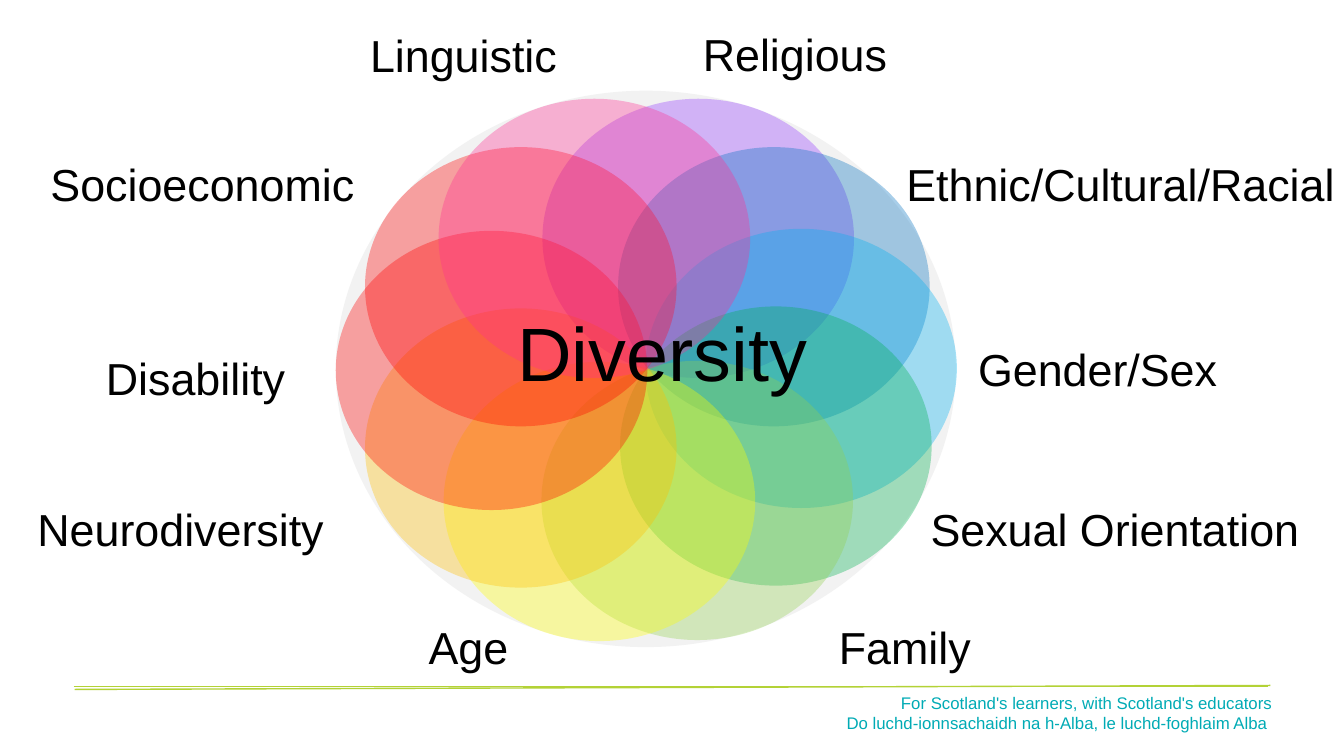
from dataclasses import dataclass

from lxml import etree
from pptx import Presentation
from pptx.dml.color import RGBColor
from pptx.enum.shapes import MSO_CONNECTOR, MSO_SHAPE
from pptx.enum.text import MSO_ANCHOR, MSO_AUTO_SIZE, PP_ALIGN
from pptx.oxml.ns import qn
from pptx.shapes.base import BaseShape
from pptx.slide import Slide
from pptx.util import Inches, Pt

OVAL = MSO_SHAPE.OVAL
STRAIGHT = MSO_CONNECTOR.STRAIGHT
LEFT = PP_ALIGN.LEFT
RIGHT = PP_ALIGN.RIGHT
TOP = MSO_ANCHOR.TOP
NO_AUTOFIT = MSO_AUTO_SIZE.NONE
TITLE_ONLY_LAYOUT = 5


@dataclass(frozen=True)
class Theme:
    font: str = "Arial"
    text: str = "000000"
    disc: str = "F2F2F2"
    rule: str = "B3D236"
    footer: str = "00ABB5"
    title_size: float = 54
    label_size: float = 32
    footer_size: float = 12
    petal_alpha: int = 34


@dataclass(frozen=True)
class Petal:
    left: float
    top: float
    color: str


@dataclass(frozen=True)
class Label:
    text: str
    left: float
    top: float
    width: float


@dataclass(frozen=True)
class Rule:
    start: tuple[float, float]
    end: tuple[float, float]
    weight: float


THEME = Theme()
PETAL_WIDTH, PETAL_HEIGHT = 3.09, 2.77
LABEL_HEIGHT = 0.54

RULES = [
    Rule((0.74, 6.84), (12.6, 6.8), 1),
    Rule((0.73, 6.81), (12.58, 6.81), 0.75),
]

# Clockwise from the top right, back to front
PETALS = [
    Petal(5.38, 0.98, "9437FF"),
    Petal(6.13, 1.46, "0070C0"),
    Petal(6.4, 2.27, "00B0F0"),
    Petal(6.15, 3.04, "00B050"),
    Petal(5.37, 3.58, "92D050"),
    Petal(4.4, 3.59, "FFFF00"),
    Petal(3.62, 3.06, "FFC000"),
    Petal(3.33, 2.29, "FF0000"),
    Petal(3.62, 1.46, "FF0000"),
    Petal(4.35, 0.98, "FF2F92"),
]

LABELS = [
    Label("Religious", 6.97, 0.27, 2.39),
    Label("Ethnic/Cultural/Racial", 8.99, 1.55, 4.34),
    Label("Gender/Sex", 9.7, 3.39, 2.99),
    Label("Sexual Orientation", 9.23, 4.98, 4.1),
    Label("Family", 8.32, 6.15, 1.62),
    Label("Age", 4.25, 6.15, 1.08),
    Label("Neurodiversity", 0.37, 4.98, 3.55),
    Label("Disability", 1.05, 3.48, 2.99),
    Label("Socioeconomic", 0.5, 1.55, 3.08),
    Label("Linguistic", 3.67, 0.28, 2.39),
]

FOOTER_LINES = [
    "For Scotland's learners, with Scotland's educators",
    "Do luchd-ionnsachaidh na h-Alba, le luchd-foghlaim Alba ",
]


def write_text(shape: BaseShape, lines: list[str], *, size: float,
               color: str = THEME.text, align: PP_ALIGN = LEFT,
               inset: tuple[float, float] = (0, 0)) -> None:
    """Fill a shape with one paragraph per line; inset is (sides, top and bottom)."""
    frame = shape.text_frame
    frame.text = "\n".join(lines)
    frame.word_wrap = True
    frame.auto_size = NO_AUTOFIT
    frame.vertical_anchor = TOP
    frame.margin_left = frame.margin_right = Inches(inset[0])
    frame.margin_top = frame.margin_bottom = Inches(inset[1])
    for paragraph in frame.paragraphs:
        paragraph.alignment = align
        paragraph.line_spacing = 1.0
        paragraph.space_before = Pt(0)
        font = paragraph.runs[0].font
        font.name = THEME.font
        font.size = Pt(size)
        font.color.rgb = RGBColor.from_string(color)


def add_text(slide: Slide, lines: list[str], left: float, top: float,
             width: float, height: float, **text_format) -> None:
    box = slide.shapes.add_textbox(
        Inches(left), Inches(top), Inches(width), Inches(height))
    write_text(box, lines, **text_format)


def add_ellipse(slide: Slide, left: float, top: float, width: float,
                height: float, color: str, alpha: int = 100) -> None:
    shape = slide.shapes.add_shape(
        OVAL, Inches(left), Inches(top), Inches(width), Inches(height))
    shape.shadow.inherit = False
    shape.line.fill.background()
    shape.fill.solid()
    shape.fill.fore_color.rgb = RGBColor.from_string(color)
    if alpha < 100:
        color_element = next(shape._element.spPr.iter(qn("a:srgbClr")))
        etree.SubElement(color_element, qn("a:alpha"), val=str(alpha * 1000))


def add_rule(slide: Slide, rule: Rule) -> None:
    connector = slide.shapes.add_connector(
        STRAIGHT, *(Inches(value) for value in rule.start + rule.end))
    connector.line.color.rgb = RGBColor.from_string(THEME.rule)
    connector.line.width = Pt(rule.weight)
    etree.SubElement(connector._element.spPr, qn("a:effectLst"))


def place_title(slide: Slide) -> None:
    title = slide.shapes.title
    title.left, title.top = Inches(5.03), Inches(2.98)
    title.width, title.height = Inches(3.3), Inches(1.01)
    write_text(title, ["Diversity"], size=THEME.title_size, inset=(0.1, 0.05))
    # The title sits in front of the petals
    slide.shapes._spTree.append(title._element)


def main() -> None:
    presentation = Presentation()
    presentation.slide_width = Inches(13.33)
    presentation.slide_height = Inches(7.5)
    slide = presentation.slides.add_slide(
        presentation.slide_layouts[TITLE_ONLY_LAYOUT])

    # Footer
    for rule in RULES:
        add_rule(slide, rule)
    add_text(slide, FOOTER_LINES, 8.23, 6.82, 4.49, 0.5, size=THEME.footer_size,
             color=THEME.footer, align=RIGHT, inset=(0.1, 0.05))

    # Flower of overlapping petals on a pale disc
    add_ellipse(slide, 3.33, 0.9, 6.15, 5.52, THEME.disc)
    for petal in PETALS:
        add_ellipse(slide, petal.left, petal.top, PETAL_WIDTH, PETAL_HEIGHT,
                    petal.color, THEME.petal_alpha)

    # Labels around the flower, title at its heart
    for label in LABELS:
        add_text(slide, [label.text], label.left, label.top, label.width,
                 LABEL_HEIGHT, size=THEME.label_size)
    place_title(slide)

    presentation.save("out.pptx")


if __name__ == "__main__":
    main()
